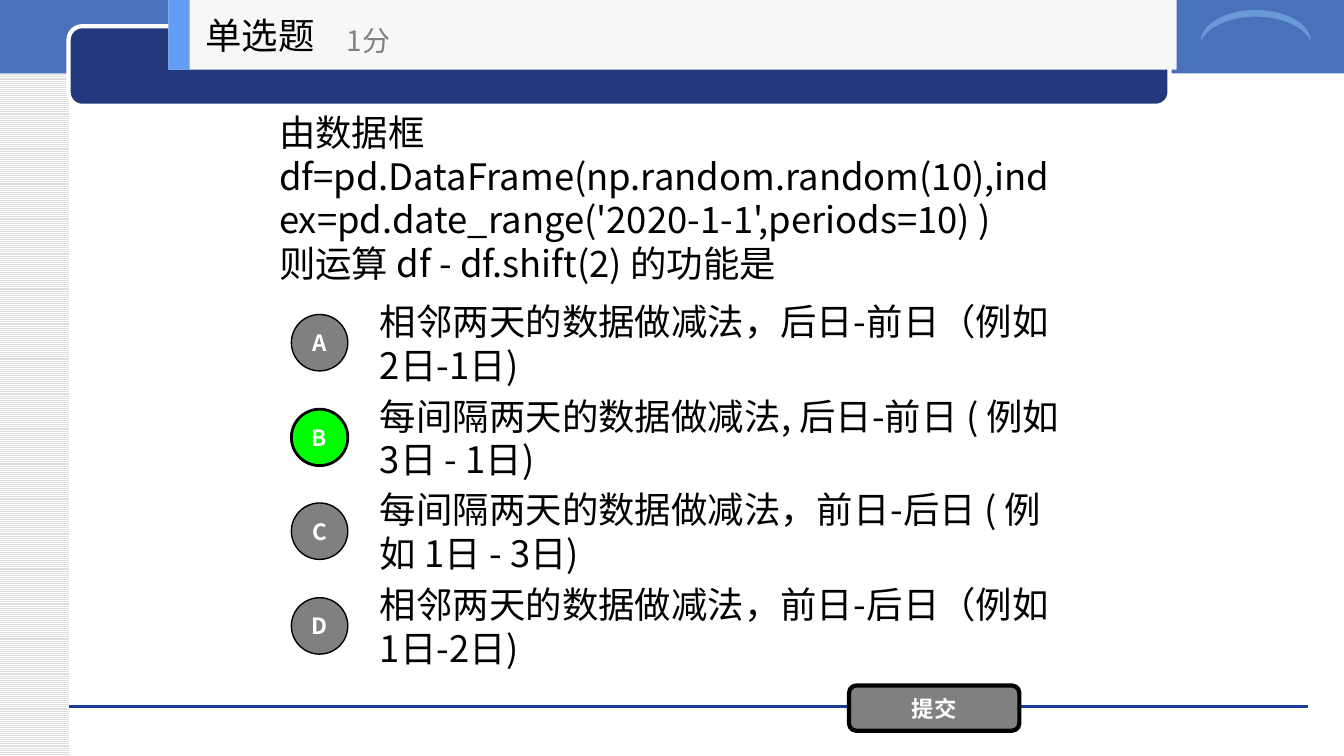
import pptx
import pptx.util
import pptx.dml.color
import pptx.enum.dml
import pptx.enum.shapes
import pptx.enum.text
import pptx.oxml.ns
import lxml.etree

RGB = pptx.dml.color.RGBColor
SHAPE = pptx.enum.shapes.MSO_SHAPE
PX = 9144  # EMU; 100 px to the inch

BLACK = RGB(0x00, 0x00, 0x00)
WHITE = RGB(0xFF, 0xFF, 0xFF)
GRAY = RGB(0x80, 0x80, 0x80)
GREEN = RGB(0x00, 0xFF, 0x00)
STRIPE = RGB(0xDD, 0xDD, 0xDD)
BAND_BLUE = RGB(0x49, 0x72, 0xBB)
RULE_BLUE = RGB(0x1A, 0x3D, 0x97)
NAVY = RGB(0x23, 0x38, 0x7D)
MOON_BLUE = RGB(0x6A, 0x99, 0xD8)
HEADER_PALE = RGB(0xF6, 0xF7, 0xF8)
HEADER_BLUE = RGB(0x63, 0x9E, 0xF4)

BODY = {"size": pptx.util.Pt(26), "bold": False}
POINTS = {"size": pptx.util.Pt(20), "bold": False}
LABEL = {"size": pptx.util.Pt(16), "bold": True}


class QuizSlide:
    font_name = "Noto Sans CJK SC"

    def __init__(self, deck):
        self.slide = deck.slides.add_slide(deck.slide_layouts[6])
        self.shapes = self.slide.shapes

    def start_group(self):
        self.shapes = self.slide.shapes.add_group_shape().shapes

    def set_lines(self, shape, lines, style, color, align, spacing=None):
        frame = shape.text_frame
        frame.word_wrap = True
        frame.vertical_anchor = pptx.enum.text.MSO_ANCHOR.MIDDLE
        for number, line in enumerate(lines):
            paragraph = frame.add_paragraph() if number else frame.paragraphs[0]
            paragraph.alignment = align
            if spacing:
                paragraph.line_spacing = pptx.util.Pt(spacing)
            run = paragraph.add_run()
            run.text = line
            for key, value in {"name": self.font_name, **style}.items():
                setattr(run.font, key, value)
            run.font.color.rgb = color
            east_asian = lxml.etree.SubElement(
                run.font._element, pptx.oxml.ns.qn("a:ea"))
            east_asian.set("typeface", self.font_name)

    def text(self, box, lines, style=BODY, color=BLACK, spacing=None):
        area = self.shapes.add_textbox(*(v * PX for v in box))
        self.set_lines(area, lines, style, color,
                       pptx.enum.text.PP_ALIGN.LEFT, spacing)

    def shape(self, kind, box, fill, line=None, width=1, label=None, adjust=None):
        item = self.shapes.add_shape(kind, *(v * PX for v in box))
        item.shadow.inherit = False
        item.fill.solid()
        item.fill.fore_color.rgb = fill
        if line is None:
            item.line.fill.background()
        else:
            item.line.color.rgb = line
            item.line.width = pptx.util.Pt(width)
        if adjust is not None:
            item.adjustments[0] = adjust
        if label:
            for side in ("left", "right", "top", "bottom"):
                setattr(item.text_frame, f"margin_{side}", 0)
            self.set_lines(item, [label], LABEL, WHITE,
                           pptx.enum.text.PP_ALIGN.CENTER)
        return item

    def rule(self, left, right, y, color):
        line = self.shapes.add_connector(
            pptx.enum.shapes.MSO_CONNECTOR.STRAIGHT,
            left * PX, y * PX, right * PX, y * PX)
        line.line.color.rgb = color
        line.line.width = pptx.util.Pt(0)
        lxml.etree.SubElement(line._element.spPr,
                              pptx.oxml.ns.qn("a:effectLst"))


def main():
    deck = pptx.Presentation()
    deck.slide_width = pptx.util.Inches(13.33)
    deck.slide_height = pptx.util.Inches(7.5)
    quiz = QuizSlide(deck)

    # Backdrop
    side_strip = quiz.shape(SHAPE.RECTANGLE, (0, 0, 68, 750), WHITE)
    side_strip.fill.patterned()
    side_strip.fill.pattern = pptx.enum.dml.MSO_PATTERN.LIGHT_HORIZONTAL
    side_strip.fill.fore_color.rgb = STRIPE
    side_strip.fill.back_color.rgb = WHITE
    quiz.shape(SHAPE.RECTANGLE, (0, -3, 1333, 76), BAND_BLUE)
    quiz.rule(68, 1297, 701, RULE_BLUE)
    quiz.shape(SHAPE.ROUNDED_RECTANGLE, (68, 26, 1092, 79), NAVY,
               WHITE, 3, adjust=0.17)
    moon = quiz.shape(SHAPE.MOON, (1230, -29, 31, 109), MOON_BLUE, adjust=0.21)
    moon.rotation = 90

    # Question
    quiz.text((267, 79, 800, 234), [
        "由数据框df=pd.DataFrame(np.random.random(10),"
        "index=pd.date_range('2020-1-1',periods=10) )",
        "则运算 df - df.shift(2) 的功能是",
    ], spacing=31.2)

    # Options, the right answer in green
    options = {
        "A": "相邻两天的数据做减法，后日-前日（例如 2日-1日)",
        "B": "每间隔两天的数据做减法, 后日-前日 ( 例如 3日 - 1日)",
        "C": "每间隔两天的数据做减法，前日-后日 ( 例如 1日 - 3日)",
        "D": "相邻两天的数据做减法，前日-后日（例如 1日-2日)",
    }
    answer = "B"
    tops = [round(305 + row * 281 / 3) for row in range(len(options))]
    for top, wording in zip(tops, options.values()):
        quiz.text((367, top, 700, 70), [wording], spacing=31.2)
    for top, letter in zip(tops, options):
        right = letter == answer
        quiz.shape(SHAPE.OVAL, (289, top + 7, 56, 56),
                   GREEN if right else GRAY, BLACK, 2 if right else 1, letter)

    # Submit button
    quiz.shape(SHAPE.ROUNDED_RECTANGLE, (842, 680, 169, 45), GRAY,
               BLACK, 3, "提交")

    # Header
    quiz.start_group()
    quiz.shape(SHAPE.RECTANGLE, (167, 0, 1000, 69), HEADER_PALE)
    quiz.shape(SHAPE.RECTANGLE, (167, 0, 21, 69), HEADER_BLUE)
    quiz.text((194, 0, 208, 69), ["单选题"])
    quiz.text((334, 12, 250, 56), ["1分"], POINTS, GRAY)

    deck.save("out.pptx")


if __name__ == "__main__":
    main()
